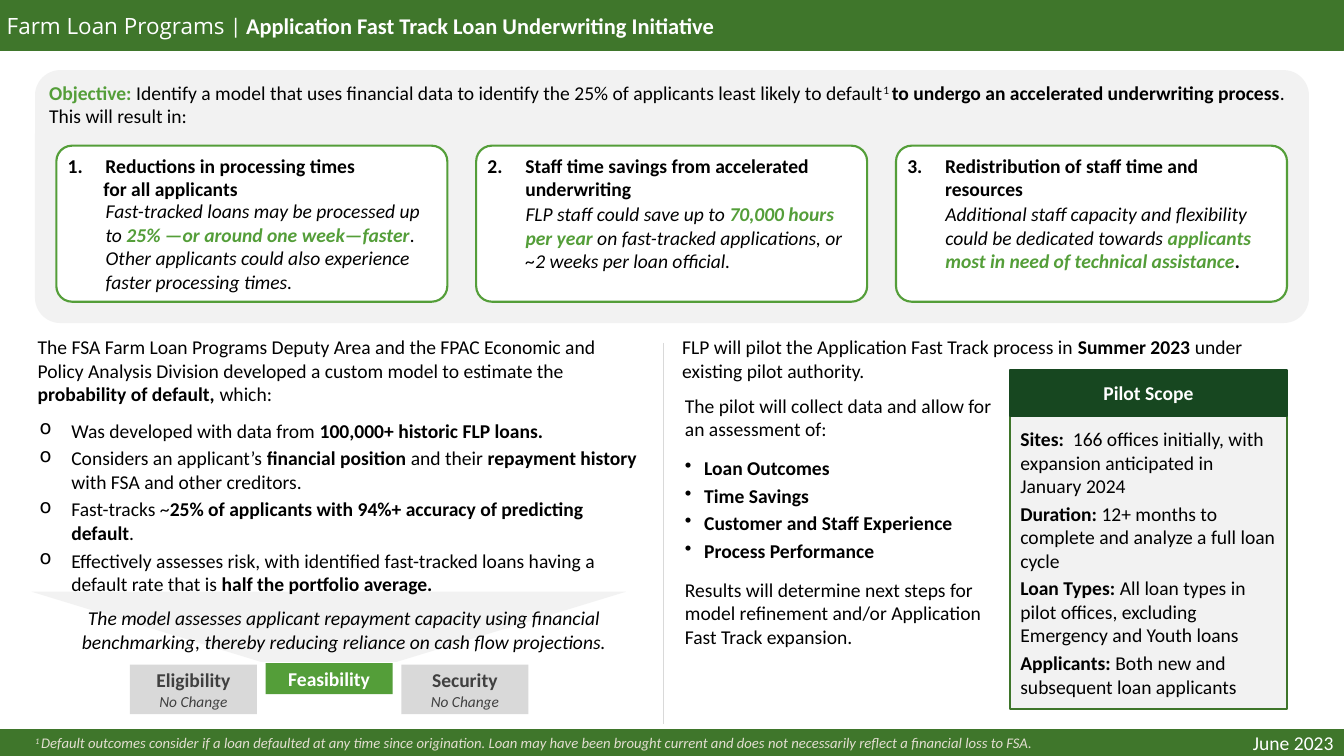
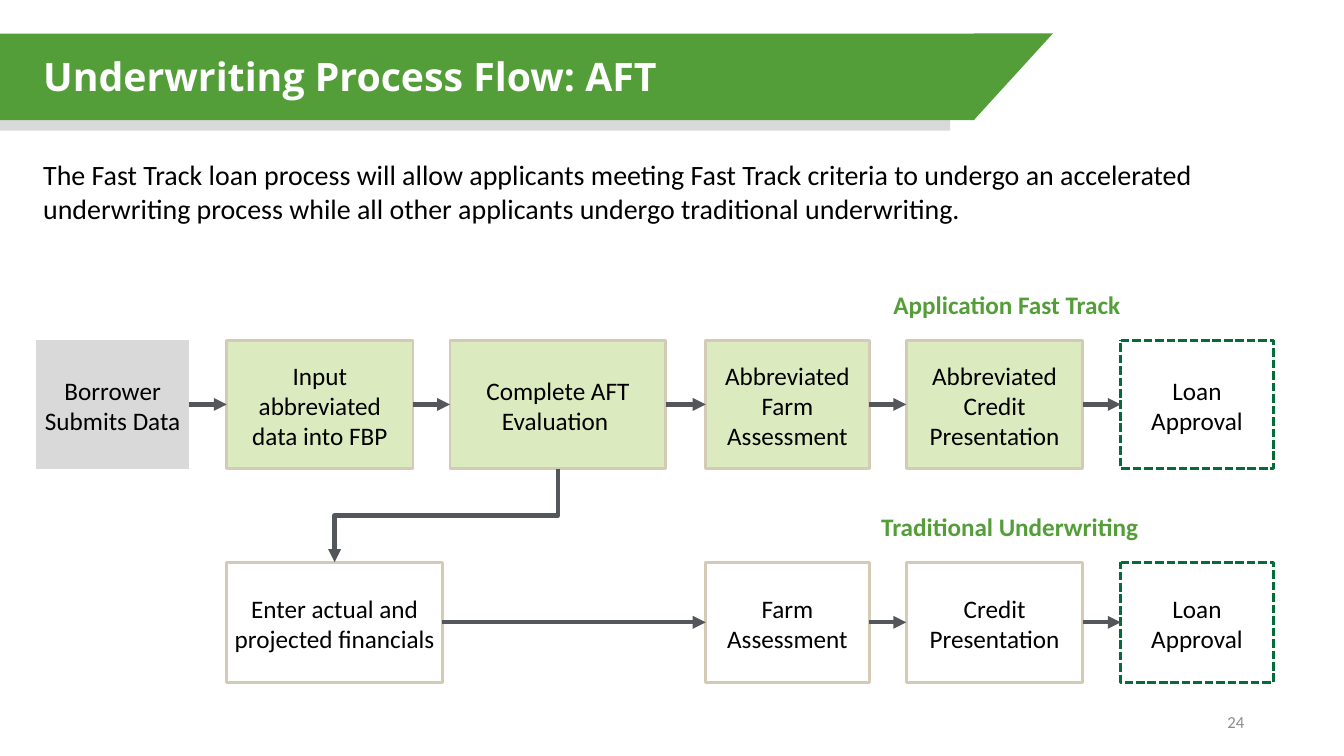
from lxml import etree
from pptx import Presentation
from pptx.dml.color import RGBColor
from pptx.enum.dml import MSO_LINE
from pptx.enum.shapes import MSO_CONNECTOR as CXN, MSO_SHAPE as SHAPE
from pptx.enum.text import MSO_ANCHOR as ANCHOR, PP_ALIGN as ALIGN
from pptx.oxml.ns import qn
from pptx.util import Pt

PX = 9144  # EMU per px, 100 px to the inch
SLIDE_W, SLIDE_H = 1956, 1100

# Colours
BLACK, WHITE = "000000", "FFFFFF"
GREEN, BAR, FOREST, SCOPE_EDGE, DASH = "549E39", "3F762B", "174720", "3E752A", "046C38"
PALE, GREY, DARK, LIME, SAND, ARROW = "F2F2F2", "D9D9D9", "404040", "86BC25", "D3CBB6", "53565A"

# Text formats
BODY = dict(name="Calibri", size=Pt(20.5), color=BLACK)
ON_GREEN = BODY | dict(color=WHITE)
ITALIC = BODY | dict(italic=True)
FOOTNOTE = dict(name="Calibri", size=Pt(15.4), color="E3DED1", italic=True)
BANNER = dict(name="Open Sans", size=Pt(41.1), color=WHITE, bold=True)
INTRO = BODY | dict(size=Pt(29.3))
FLOW = BODY | dict(size=Pt(26.4))
PAGE_NO = BODY | dict(size=Pt(17.6), color="8C8C8C")
BOLD = dict(bold=True)
HOT = dict(bold=True, color=GREEN)
SUPER = dict(sup=30000)
WIDE_INS = (15, 7, 15, 7)
FLOW_INS = (10, 7, 10, 5)


def para(*runs, **opts):
    """A paragraph: runs are text or (text, format)."""
    return runs, opts


# Content of slide 1
TITLE = para(("Farm Loan Programs ", dict(name="Open Sans", size=Pt(23.5))),
             ("| ", dict(size=Pt(23.5))),
             ("Application Fast Track Loan Underwriting Initiative", dict(size=Pt(23.5), bold=True)))
OBJECTIVE = para(
    ("Objective: ", HOT),
    "Identify a model that uses financial data to identify the 25% of applicants least likely to default",
    ("1 ", SUPER), ("to undergo an accelerated underwriting process", BOLD),
    ". This will result in:")
CARDS = [  # heading lines, body top, body
    (["Reductions in processing times", "for all applicants"], 285,
     para("Fast-tracked loans may be processed up to ", ("25% —or around one week—faster", HOT),
          ". Other applicants could also experience faster processing times.")),
    (["Staff time savings from accelerated underwriting"], 289,
     para("FLP staff could save up to ", ("70,000 hours per year", HOT),
          " on fast-tracked applications, or ~2 weeks per loan official.")),
    (["Redistribution of staff time and resources"], 289,
     para("Additional staff capacity and flexibility could be dedicated towards ",
          ("applicants most in need of technical assistance", HOT), (".", BOLD))),
]
MODEL = para(
    "The FSA Farm Loan Programs Deputy Area and the FPAC Economic and Policy Analysis Division "
    "developed a custom model to estimate the ", ("probability of default, ", BOLD), "which:")
MODEL_POINTS = [
    ["Was developed with data from ", ("100,000+ historic FLP loans.", BOLD)],
    ["Considers an applicant’s ", ("financial position", BOLD), " and their ",
     ("repayment history ", BOLD), "with FSA and other creditors."],
    ["Fast-tracks ~", ("25% of applicants with 94%+ accuracy of predicting default", BOLD), "."],
    ["Effectively assesses risk, with identified fast-tracked loans having a default rate that is ",
     ("half the portfolio average.", BOLD)],
]
FUNNEL_NOTE = para("The model assesses applicant repayment capacity using financial benchmarking, "
                   "thereby reducing reliance on cash flow projections.")
STAGES = [  # name, note, top, height, fill, text colour
    ("Eligibility", "No Change", 967, 72, GREY, DARK),
    ("Feasibility", None, 965, 45, GREEN, WHITE),
    ("Security", "No Change", 967, 72, GREY, DARK),
]
PILOT = para("FLP will pilot the Application Fast Track process in ", ("Summer 2023 ", BOLD),
             "under existing pilot authority.")
PILOT_DATA = "The pilot will collect data and allow for an assessment of:"
PILOT_MEASURES = ["Loan Outcomes", "Time Savings", "Customer and Staff Experience",
                  "Process Performance"]
PILOT_NEXT = ("Results will determine next steps for model refinement and/or "
              "Application Fast Track expansion.")
SCOPE = [
    ("Sites:\u00a0 ", "166 offices initially, with expansion anticipated in January 2024"),
    ("Duration: ", "12+ months to complete and analyze a full loan cycle"),
    ("Loan Types: ", "All loan types in pilot offices, excluding Emergency and Youth loans"),
    ("Applicants: ", "Both new and subsequent loan applicants"),
]
DEFAULT_NOTE = para(
    ("1 ", SUPER),
    "Default outcomes consider if a loan defaulted at any time since origination. Loan may have "
    "been brought current and does not necessarily reflect a financial loss to FSA.")

# Content of slide 2
FLOW_INTRO = ("The Fast Track loan process will allow applicants meeting Fast Track criteria to "
              "undergo an accelerated underwriting process while all other applicants undergo "
              "traditional underwriting.")
ROWS = {"fast": (495, 187), "traditional": (818, 175)}  # top, height
FLOW_ROWS = {  # left, width, text, look
    "fast": [
        (53, 222, "Borrower Submits Data", "start"),
        (330, 271, "Input abbreviated data into FBP", "short"),
        (655, 314, "Complete AFT Evaluation ", "short"),
        (1027, 238, "Abbreviated Farm Assessment", "short"),
        (1319, 257, "Abbreviated Credit Presentation", "short"),
        (1631, 222, "Loan Approval", "end"),
    ],
    "traditional": [
        (330, 314, "Enter actual and projected financials ", "full"),
        (1027, 238, "Farm Assessment", "full"),
        (1319, 257, "Credit Presentation", "full"),
        (1631, 222, "Loan Approval", "end"),
    ],
}
LOOKS = {
    "start": dict(fill=GREY),
    "short": dict(fill=LIME, alpha=29, line=SAND, weight=3),
    "full": dict(line=SAND, weight=3),
    "end": dict(line=DASH, weight=3, dash=MSO_LINE.SQUARE_DOT),
}
TRACKS = [(415, "Application Fast Track "), (738, "Traditional Underwriting")]


# Helpers
def rgb(value):
    return RGBColor.from_string(value)


def px(*values):
    return [round(v * PX) for v in values]


def add_run(p, text, fmt):
    r = p.add_run()
    r.text = text
    for key, value in fmt.items():
        if key == "color":
            r.font.color.rgb = rgb(value)
        elif key == "sup":
            r._r.get_or_add_rPr().set("baseline", str(value))
        else:
            setattr(r.font, key, value)


def write(sp, paras, fmt, align=ALIGN.LEFT, anchor=ANCHOR.TOP, ins=(10, 5, 10, 5)):
    tf = sp.text_frame
    tf.word_wrap = True
    tf.vertical_anchor = anchor
    tf.margin_left, tf.margin_top, tf.margin_right, tf.margin_bottom = px(*ins)
    for i, (runs, opts) in enumerate(paras):
        p = tf.paragraphs[0] if i == 0 else tf.add_paragraph()
        p.alignment = align
        p.space_before, p.space_after = Pt(opts.get("before", 0)), Pt(opts.get("after", 0))
        pPr = p._p.get_or_add_pPr()
        left = opts.get("left", 0)
        if "bullet" in opts or "number" in opts:
            pPr.set("marL", str(left * PX))
            pPr.set("indent", str(-left * PX))
            if "bullet" in opts:
                etree.SubElement(pPr, qn("a:buChar"), char=opts["bullet"])
            else:
                etree.SubElement(pPr, qn("a:buAutoNum"), type="arabicPeriod",
                                 startAt=str(opts["number"]))
        elif left:
            pPr.set("marL", str(left * PX))
        for run in runs:
            text, extra = (run, {}) if isinstance(run, str) else run
            add_run(p, text, fmt | extra)
    return sp


def add_box(slide, box, fill=None, line=None, weight=1, kind=SHAPE.RECTANGLE, adj=None,
            alpha=None, dash=None, rotation=0):
    sp = slide.shapes.add_shape(kind, *px(*box))
    sp.shadow.inherit = False
    sp.rotation = rotation
    if adj is not None:
        sp.adjustments[0] = adj
    if fill:
        sp.fill.solid()
        sp.fill.fore_color.rgb = rgb(fill)
        if alpha:
            color = sp._element.spPr.find(f"{qn('a:solidFill')}/{qn('a:srgbClr')}")
            etree.SubElement(color, qn("a:alpha"), val=str(alpha * 1000))
    else:
        sp.fill.background()
    if line:
        sp.line.color.rgb = rgb(line)
        sp.line.width = Pt(weight)
        if dash:
            sp.line.dash_style = dash
    else:
        sp.line.fill.background()
    return sp


def add_text(slide, box, paras, fmt, **opts):
    return write(slide.shapes.add_textbox(*px(*box)), paras, fmt, **opts)


def add_line(slide, ends, color, weight, kind=CXN.STRAIGHT, arrow=False):
    c = slide.shapes.add_connector(kind, *px(*ends))
    c.line.color.rgb = rgb(color)
    c.line.width = Pt(weight)
    if arrow:
        etree.SubElement(c.line._get_or_add_ln(), qn("a:tailEnd"), type="triangle")
    etree.SubElement(c._element.spPr, qn("a:effectLst"))
    return c


def build_overview(slide):
    # Title and footer bars
    write(add_box(slide, (0, 0, SLIDE_W, 73), BAR, BAR), [TITLE], ON_GREEN, anchor=ANCHOR.MIDDLE)
    write(add_box(slide, (0, 1061, SLIDE_W, 39), BAR, BAR), [para("June 2023")], ON_GREEN,
          align=ALIGN.RIGHT, anchor=ANCHOR.MIDDLE, ins=WIDE_INS)
    add_text(slide, (36, 1061, 1643, 41), [DEFAULT_NOTE], FOOTNOTE, ins=WIDE_INS)

    # Objective panel with its three numbered cards
    write(add_box(slide, (51, 102, 1854, 368), PALE, kind=SHAPE.ROUNDED_RECTANGLE, adj=0.1),
          [OBJECTIVE], BODY)
    for i, (heading, body_top, body) in enumerate(CARDS):
        x = 82 + 611 * i
        card = add_box(slide, (x, 212, 569, 227), WHITE, GREEN, 2.25,
                       kind=SHAPE.ROUNDED_RECTANGLE, adj=0.1)
        first, *rest = heading
        write(card, [para(first, left=55, number=i + 1)] + [para(t, left=52) for t in rest],
              BODY | BOLD)
        add_text(slide, (x + 62, body_top, 507, 148), [body], ITALIC)

    # Model column
    add_line(slide, (966, 499, 966, 1053), GREY, 1.5)
    add_text(slide, (45, 483, 896, 114), [MODEL], BODY)
    add_box(slide, (46, 861, 865, 102), PALE, kind=SHAPE.TRAPEZOID, adj=3.27, rotation=180)
    add_text(slide, (48, 604, 890, 309),
             [para(*runs, left=46, bullet="o", after=4.4) for runs in MODEL_POINTS], BODY)
    add_text(slide, (56, 877, 890, 79), [FUNNEL_NOTE], ITALIC, align=ALIGN.CENTER)
    for i, (name, note, top, height, fill, color) in enumerate(STAGES):
        paras = [para((name, BOLD))]
        if note:
            paras.append(para((note, dict(size=Pt(16.1), italic=True))))
        write(add_box(slide, (189 + 197.5 * i, top, 185, height), fill), paras,
              BODY | dict(color=color), align=ALIGN.CENTER, anchor=ANCHOR.MIDDLE)

    # Pilot column
    add_text(slide, (983, 483, 922, 79), [PILOT], BODY)
    measures = [para((name, BOLD), left=28, bullet="•", after=4.4, before=0 if i else 11.6)
                for i, name in enumerate(PILOT_MEASURES)]
    write(add_box(slide, (987, 568, 467, 316), WHITE, kind=SHAPE.FLOWCHART_PROCESS),
          [para(PILOT_DATA, after=4.4), *measures, para(PILOT_NEXT, before=11.6, after=4.4)], BODY)
    write(add_box(slide, (1470, 605, 403, 427), PALE, SCOPE_EDGE, 2.25, SHAPE.FLOWCHART_PROCESS),
          [para((label, BOLD), text, after=4.4) for label, text in SCOPE], BODY,
          anchor=ANCHOR.MIDDLE, ins=WIDE_INS)
    write(add_box(slide, (1470, 538, 403, 67), FOREST, FOREST, 2.25, SHAPE.FLOWCHART_PROCESS),
          [para("Pilot Scope")], ON_GREEN | BOLD, align=ALIGN.CENTER, anchor=ANCHOR.MIDDLE)


def build_flow(slide):
    # Banner
    add_box(slide, (0, 84, 1383, 106), GREY)
    add_box(slide, (1412, 54, 126, 115), GREEN, kind=SHAPE.RIGHT_TRIANGLE, rotation=90)
    add_box(slide, (0, 49, 1418, 126), GREEN)
    add_text(slide, (53, 71, 1277, 79), [para("Underwriting Process Flow: AFT")], BANNER)
    add_text(slide, (53, 225, 1786, 109), [para(FLOW_INTRO)], INTRO)

    # Steps, each joined to the one before it (site 3 is right, site 1 is left)
    for row, steps in FLOW_ROWS.items():
        top, height = ROWS[row]
        previous = None
        for left, width, text, look in steps:
            sp = add_box(slide, (left, top, width, height), kind=SHAPE.FLOWCHART_PROCESS,
                         **LOOKS[look])
            write(sp, [para(text)], FLOW, align=ALIGN.CENTER, anchor=ANCHOR.MIDDLE, ins=FLOW_INS)
            if previous:
                c = add_line(slide, (0, 0, 1, 1), ARROW, 4.5, arrow=True)
                c.begin_connect(previous, 3)
                c.end_connect(sp, 1)
            previous = sp

    # Elbow from the evaluation down to the traditional track, a turned connector
    x1, y1 = 655 + 314 / 2, sum(ROWS["fast"])
    x2, y2 = 330 + 314 / 2, ROWS["traditional"][0]
    mid_x, mid_y, half_w, half_h = (x1 + x2) / 2, (y1 + y2) / 2, (y2 - y1) / 2, (x1 - x2) / 2
    elbow = add_line(slide, (mid_x - half_w, mid_y - half_h, mid_x + half_w, mid_y + half_h),
                     ARROW, 4.5, CXN.ELBOW, arrow=True)
    elbow._element.spPr.find(qn("a:xfrm")).set("rot", str(90 * 60000))

    # Track labels and page number
    for top, name in TRACKS:
        write(add_box(slide, (1046, top, 861, 55), kind=SHAPE.PENTAGON), [para(name)],
              FLOW | HOT, align=ALIGN.CENTER, anchor=ANCHOR.MIDDLE)
    add_text(slide, (1381, 1020, 440, 59), [para("24")], PAGE_NO, align=ALIGN.RIGHT,
             anchor=ANCHOR.MIDDLE)


def main():
    prs = Presentation()
    prs.slide_width, prs.slide_height = px(SLIDE_W, SLIDE_H)
    for build in (build_overview, build_flow):
        build(prs.slides.add_slide(prs.slide_layouts[6]))
    prs.save("out.pptx")


if __name__ == "__main__":
    main()
